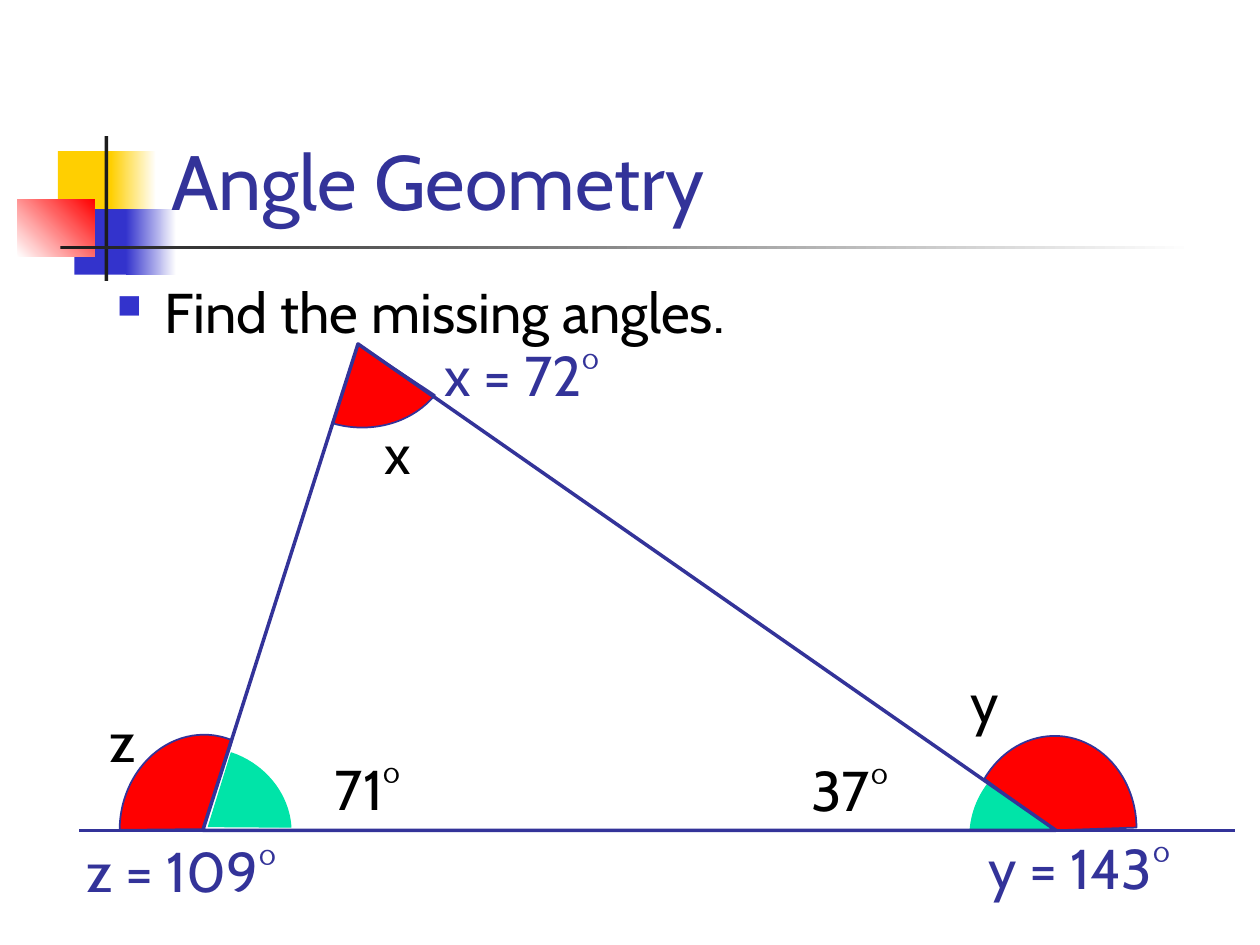
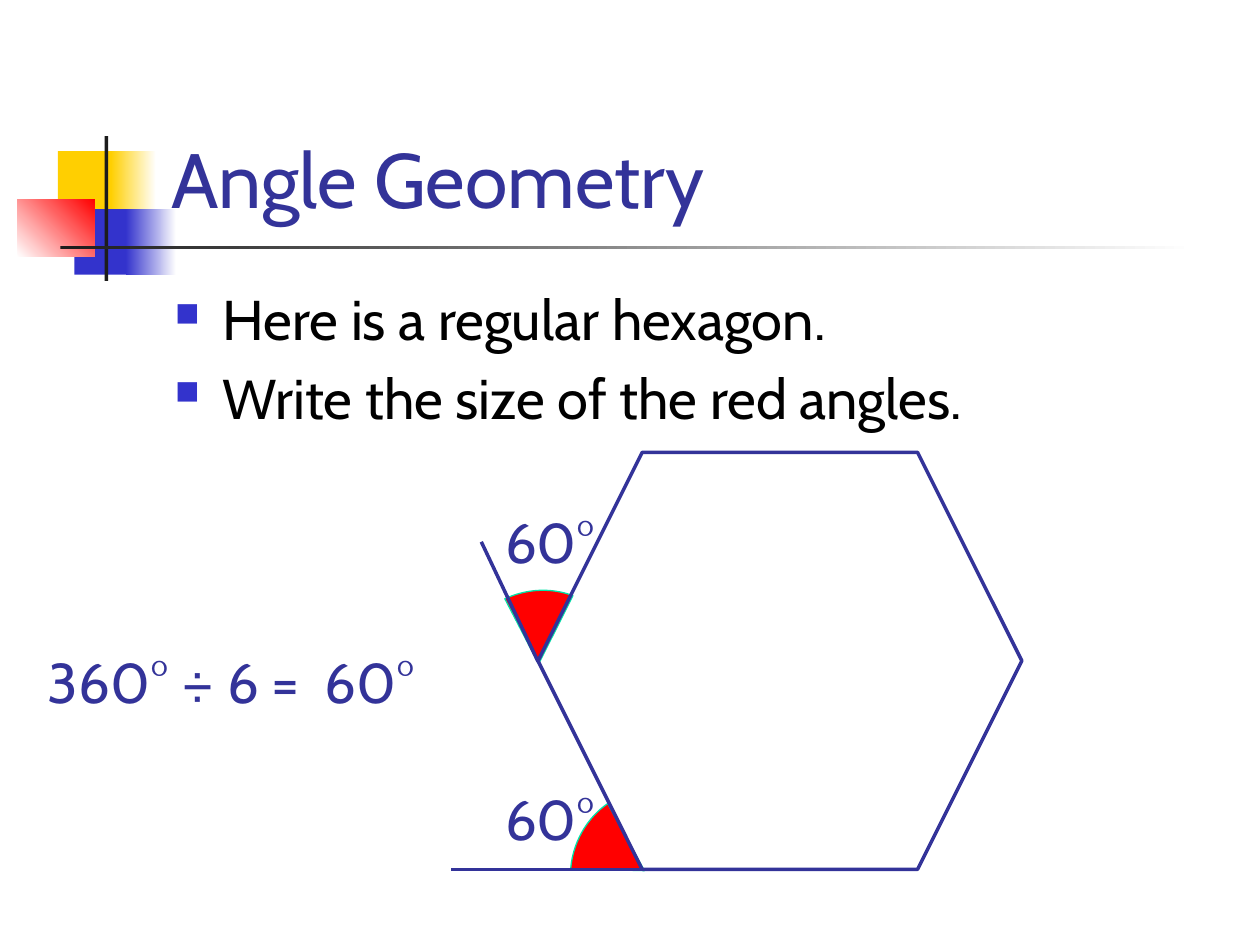
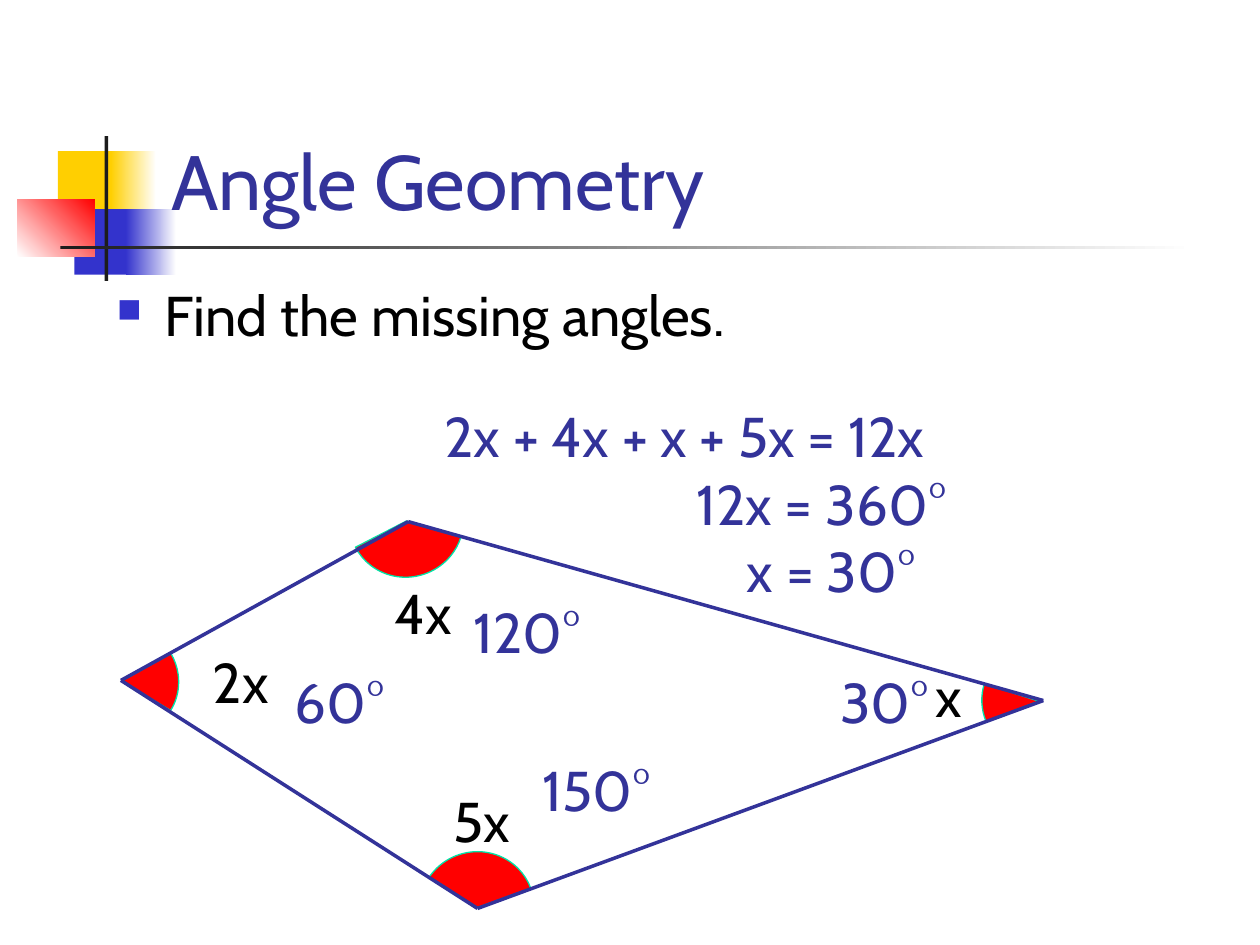
"""Build three angle geometry slides."""
from lxml import etree
from pptx import Presentation
from pptx.dml.color import RGBColor
from pptx.enum.shapes import MSO_CONNECTOR, MSO_SHAPE
from pptx.enum.text import MSO_ANCHOR
from pptx.oxml.ns import qn
from pptx.util import Inches, Pt

RECTANGLE = MSO_SHAPE.RECTANGLE
PIE = MSO_SHAPE.PIE
TRIANGLE = MSO_SHAPE.ISOSCELES_TRIANGLE
HEXAGON = MSO_SHAPE.HEXAGON
STRAIGHT = MSO_CONNECTOR.STRAIGHT
BOTTOM = MSO_ANCHOR.BOTTOM

FONT = "Cabin"
INK, BLACK, WHITE = "333399", "000000", "FFFFFF"
YELLOW, BLUE, RED, GREEN, DARK = "FFCF01", "3333CC", "FF0000", "00E4A8", "1C1C1C"
TITLE = "Angle Geometry"
LABEL_HEIGHT = 0.64
HANGING = 0.38
PIE_UNITS_PER_DEGREE = 0.6

DECORATIONS = [
    ((0.46, 1.2, 0.48, 0.52), [YELLOW], 0),
    ((0.88, 1.2, 0.36, 0.52), [YELLOW, WHITE], 0),
    ((0.59, 1.66, 0.46, 0.52), [BLUE], 0),
    ((1, 1.66, 0.4, 0.52), [BLUE, WHITE], 0),
    ((0.14, 1.58, 0.61, 0.46), [WHITE, RED], 45),
    ((0.83, 1.08, 0.03, 1.15), [DARK], 0),
    ((0.48, 1.95, 9, 0.03), [DARK, WHITE], 0),
]

kite = [(8.28, 5.56), (3.79, 7.21), (0.96, 5.4), (3.24, 4.14)]

SLIDES = [
    {
        "title_box": (1.26, 0.76, 5.08, 1.08),
        "body_box": (0.83, 2.15, 5.64, 1.15),
        "bullets": ["Find the missing angles."],
        "pies": [
            ((2.09, 2.07, 1.5, 1.32), 11, 22.56, 96.71, RED, INK, 1),
            ((0.86, 5.92, 1.5, 1.32), 273.3, 266.19, 15.08, RED, INK, 1),
            ((7.61, 5.93, 1.5, 1.32), 273.3, 303.59, 84.73, RED, INK, 1),
            ((7.67, 5.97, 1.33, 1.22), 312.9, 227.21, 263.34, GREEN, GREEN, 0),
            ((0.99, 5.95, 1.33, 1.22), 26, 261.21, 334.43, GREEN, GREEN, 0),
        ],
        "outlines": [(TRIANGLE, (1.61, 2.73, 6.77, 3.86), 0.182)],
        "lines": [((0.63, 6.59), (9.8, 6.59))],
        "labels": [
            ("71°", 2.56, 5.94, 1.31, BLACK),
            ("37°", 6.34, 5.95, 1.31, BLACK),
            ("y", 7.6, 5.25, 0.69, BLACK),
            ("x", 2.95, 3.27, 0.87, BLACK),
            ("z", 0.77, 5.56, 0.69, BLACK),
            ("x = 72°", 3.43, 2.65, 1.96, INK),
            ("z = 109°", 0.59, 6.59, 1.96, INK),
            ("y = 143°", 7.75, 6.57, 2.13, INK),
        ],
    },
    {
        "title_box": (1.26, 0.23, 8.52, 1.6),
        "body_box": (1.29, 2.21, 8.5, 4.5),
        "bullets": ["Here is a regular hexagon.", "Write the size of the red angles."],
        "pies": [
            ((3.63, 4.69, 1.29, 1.16), 344.5, 258.1, 312.14, RED, GREEN, 0),
            ((4.47, 6.33, 1.29, 1.16), 289.2, 252.17, 312.14, RED, GREEN, 0),
        ],
        "outlines": [(HEXAGON, (4.27, 3.59, 3.84, 3.31), 0.25)],
        "lines": [((4.27, 5.25), (3.82, 4.3)), ((7.13, 6.9), (3.58, 6.9))],
        "labels": [
            ("360° ÷ 6 =  60°", 0.28, 5.09, 4.02, INK),
            ("60°", 3.91, 6.18, 1.01, INK),
            ("60°", 3.91, 3.98, 1.01, INK),
        ],
    },
    {
        "title_box": (1.26, 0.76, 5.08, 1.08),
        "body_box": (0.83, 2.18, 5.64, 0.94),
        "bullets": ["Find the missing angles."],
        "pies": [
            ((0.51, 4.96, 0.91, 0.89), 22.9, 308.06, 8.09, RED, GREEN, 0),
            ((7.79, 5.12, 0.91, 0.89), 208.4, 310.4, 349.45, RED, GREEN, 0),
            ((2.77, 3.69, 0.91, 0.89), 158.6, 217.92, 354.11, RED, GREEN, 0),
            ((3.33, 6.76, 0.91, 0.89), 345.9, 226.92, 354.11, RED, GREEN, 0),
        ],
        "outlines": [],
        "lines": list(zip(kite, kite[1:] + kite[:1])),
        "labels": [
            ("x", 7.33, 5.2, 0.69, BLACK),
            ("2x", 1.59, 5.09, 0.69, BLACK),
            ("4x", 3.03, 4.54, 0.69, BLACK),
            ("5x", 3.5, 6.19, 0.69, BLACK),
            ("30°", 6.57, 5.25, 1.02, INK),
            ("120°", 3.66, 4.69, 1.34, INK),
            ("150°", 4.21, 5.95, 1.34, INK),
            ("60°", 2.24, 5.25, 1.34, INK),
        ],
    },
]
EQUATIONS = [("2x + 4x + x + 5x = 12x", 0), ("12x = 360°", 2), ("x = 30°", 2.4)]


def add_text(slide, box, lines, color, size=32):
    """Add a text box from (text, left indent) lines and return its frame."""
    frame = slide.shapes.add_textbox(*map(Inches, box)).text_frame
    frame.word_wrap = True
    for index, (text, indent) in enumerate(lines):
        paragraph = frame.paragraphs[0] if index == 0 else frame.add_paragraph()
        if indent:
            paragraph._p.get_or_add_pPr().set("marL", str(Inches(indent)))
        run = paragraph.add_run()
        run.text = text
        run.font.name = FONT
        run.font.size = Pt(size)
        run.font.color.rgb = RGBColor.from_string(color)
    return frame


def add_shape(slide, kind, box, fill=None, line=None, width=0):
    """Add a preset shape without shadow; no colour means no fill or line."""
    shape = slide.shapes.add_shape(kind, *map(Inches, box))
    shape.shadow.inherit = False
    if fill:
        shape.fill.solid()
        shape.fill.fore_color.rgb = RGBColor.from_string(fill)
    else:
        shape.fill.background()
    if line:
        shape.line.color.rgb = RGBColor.from_string(line)
        shape.line.width = Pt(width)
    else:
        shape.line.fill.background()
    return shape


presentation = Presentation()
presentation.slide_width = Inches(10)
presentation.slide_height = Inches(7.5)

for content in SLIDES:
    slide = presentation.slides.add_slide(presentation.slide_layouts[6])

    for box, colors, angle in DECORATIONS:
        shape = add_shape(slide, RECTANGLE, box, colors[0])
        if len(colors) == 2:
            shape.fill.gradient()
            shape.fill.gradient_angle = angle
            for stop, color in zip(shape.fill.gradient_stops, colors):
                stop.color.rgb = RGBColor.from_string(color)

    for box, rotation, start, end, fill, line, width in content["pies"]:
        pie = add_shape(slide, PIE, box, fill, line, width)
        pie.rotation = rotation
        pie.adjustments[0] = start * PIE_UNITS_PER_DEGREE
        pie.adjustments[1] = end * PIE_UNITS_PER_DEGREE

    for kind, box, adjustment in content["outlines"]:
        outline = add_shape(slide, kind, box, line=INK, width=2)
        outline.adjustments[0] = adjustment

    for start, end in content["lines"]:
        connector = slide.shapes.add_connector(STRAIGHT, *map(Inches, start + end))
        connector.line.color.rgb = RGBColor.from_string(INK)
        connector.line.width = Pt(2)
        etree.SubElement(connector._element.spPr, qn("a:effectLst"))

    title = add_text(slide, content["title_box"], [(TITLE, 0)], INK, 44)
    title.vertical_anchor = BOTTOM

    bullets = [(text, HANGING) for text in content["bullets"]]
    body = add_text(slide, content["body_box"], bullets, BLACK)
    for index, paragraph in enumerate(body.paragraphs):
        properties = paragraph._p.get_or_add_pPr()
        properties.set("indent", str(-Inches(HANGING)))
        bullet_color = etree.SubElement(properties, qn("a:buClr"))
        etree.SubElement(bullet_color, qn("a:srgbClr"), val=BLUE)
        etree.SubElement(properties, qn("a:buSzPct"), val="60000")
        etree.SubElement(properties, qn("a:buChar"), char="■")
        if index:
            paragraph.space_before = Pt(6.4)

    for text, left, top, width, color in content["labels"]:
        add_text(slide, (left, top, width, LABEL_HEIGHT), [(text, 0)], color)

add_text(slide, (3.43, 3.14, 5.47, 1.72), EQUATIONS, INK)

presentation.save("out.pptx")
